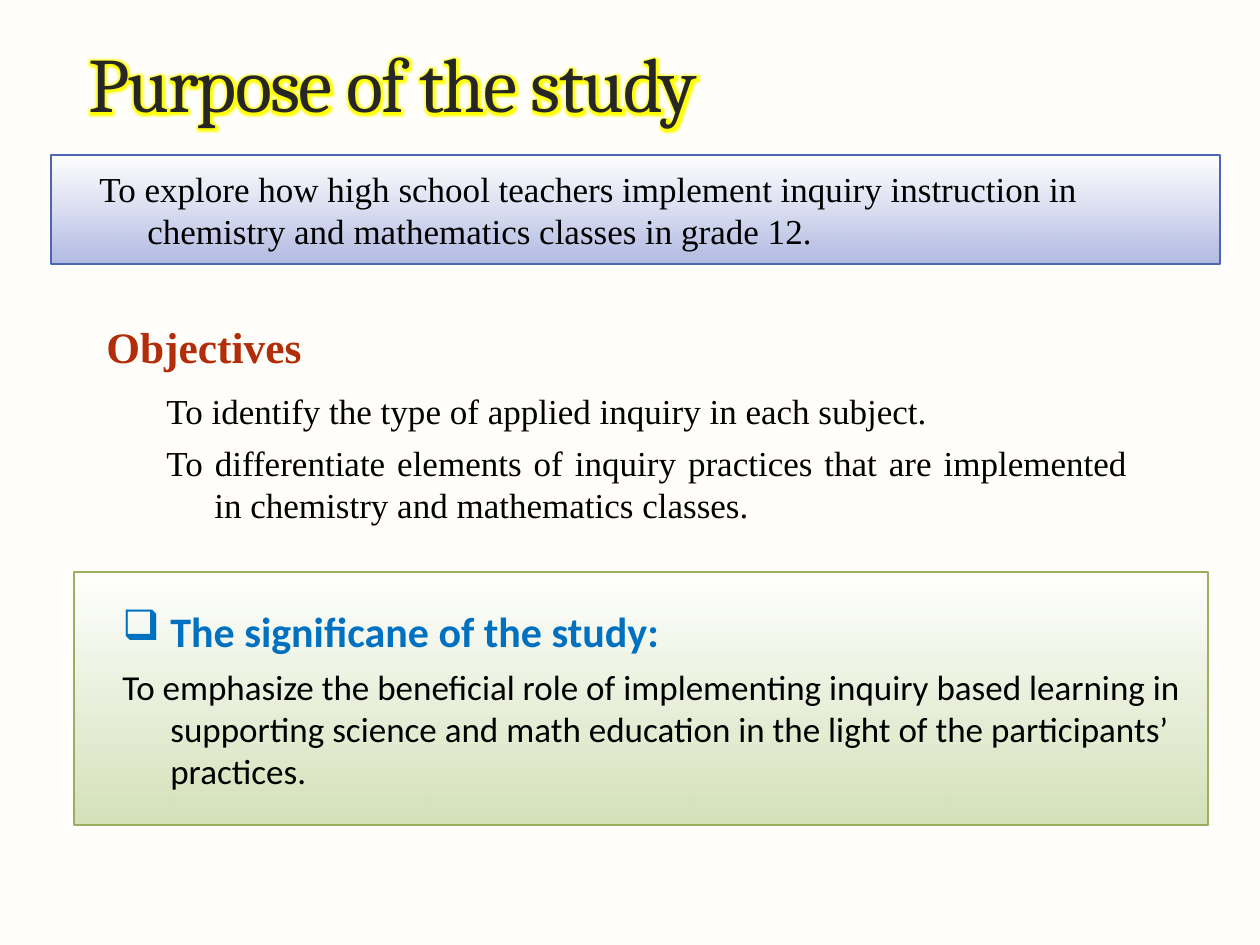
from lxml.etree import SubElement
from pptx import Presentation
from pptx.dml.color import RGBColor
from pptx.enum.shapes import MSO_SHAPE as SHAPE
from pptx.enum.text import MSO_ANCHOR as ANCHOR, PP_ALIGN as ALIGN
from pptx.oxml.ns import qn
from pptx.util import Pt

SCALE = 914400 / 126
WIDTH, HEIGHT = 1260, 945

CREAM = RGBColor(0xFF, 0xFE, 0xE6)
WHITE = RGBColor(0xFF, 0xFF, 0xFF)
BLACK = RGBColor(0, 0, 0)
CHARCOAL = RGBColor(0x26, 0x26, 0x26)
YELLOW = RGBColor(0xFF, 0xFF, 0)
RED = RGBColor(0xB2, 0x2D, 0x09)
BLUE = RGBColor(0, 0x70, 0xC0)
LAVENDER = RGBColor(0xB2, 0xBB, 0xE2)
INDIGO = RGBColor(0x4E, 0x66, 0xB2)
SAGE = RGBColor(0xD5, 0xE1, 0xB9)
GREEN = RGBColor(0x9B, 0xB0, 0x5E)

TITLE = {"name": "Cambria", "size": Pt(44)}
HEADING = {"name": "Times New Roman", "size": Pt(24.8), "bold": True}
BODY = {"name": "Times New Roman", "size": Pt(20)}
SIGN_HEADING = {"name": "Calibri", "size": Pt(24), "bold": True}
SIGN_BODY = {"name": "Calibri", "size": Pt(20)}


def px(n):
    return round(n * SCALE)


def set_alpha(color, percent):
    SubElement(color, qn("a:alpha"), val=str(percent * 1000))


def add_rect(s, box):
    sp = s.shapes.add_shape(SHAPE.RECTANGLE, *map(px, box))
    sp.shadow.inherit = False
    return sp


def add_panel(s, box, shade, border):
    """Rectangle that fades from white at the top to a shade."""
    sp = add_rect(s, box)
    sp.fill.gradient()
    sp.fill.gradient_angle = 270
    for stop, color, place in zip(sp.fill.gradient_stops, (WHITE, shade), (0, 1)):
        stop.color.rgb, stop.position = color, place
    set_alpha(next(sp._element.iter(qn("a:gs")))[0], 94)
    sp.line.color.rgb, sp.line.width = border, Pt(0.75)
    return sp


def add_textbox(s, box, anchor):
    sp = s.shapes.add_textbox(*map(px, box))
    sp.text_frame.vertical_anchor = anchor
    return sp


def write(sp, lines):
    """Fill a shape with (text, font format, colour, alignment) lines."""
    tf = sp.text_frame
    tf.word_wrap = True
    for i, (text, form, color, align) in enumerate(lines):
        p = tf.add_paragraph() if i else tf.paragraphs[0]
        p.alignment = align
        r = p.add_run()
        r.text = text
        for key, value in form.items():
            setattr(r.font, key, value)
        r.font.color.rgb = color
    return tf


def hang(tf, bullets=()):
    """Give every paragraph a hanging indent, and some a bullet."""
    for i, p in enumerate(tf.paragraphs):
        p.level = 1
        p.space_after = Pt(6)
        pPr = p._p.get_or_add_pPr()
        pPr.set("marL", str(px(84)))
        pPr.set("indent", str(px(-48)))
        if i in bullets:
            SubElement(pPr, qn("a:buChar"), char="❑")
        else:
            SubElement(pPr, qn("a:buNone"))


def background(s, box):
    s.background.fill.solid()
    s.background.fill.fore_color.rgb = CREAM
    veil = add_rect(s, box)
    veil.fill.solid()
    veil.fill.fore_color.rgb = WHITE
    set_alpha(veil._element.spPr.find(qn("a:solidFill"))[0], 85)
    veil.line.fill.background()


def title(s, box):
    tf = write(add_textbox(s, box, ANCHOR.MIDDLE),
               [("Purpose of the study", TITLE, CHARCOAL, ALIGN.LEFT)])
    # Tight letter spacing and a yellow glow
    rPr = tf.paragraphs[0].runs[0].font._element
    rPr.set("spc", "-100")
    effects = rPr.makeelement(qn("a:effectLst"))
    rPr.find(qn("a:solidFill")).addnext(effects)
    glow = SubElement(effects, qn("a:glow"), rad=str(px(9)))
    SubElement(glow, qn("a:srgbClr"), val=str(YELLOW))


def purpose(s, box):
    text = ("To explore how high school teachers implement inquiry instruction in "
            "chemistry and mathematics classes in grade 12.")
    hang(write(add_panel(s, box, LAVENDER, INDIGO), [(text, BODY, BLACK, ALIGN.LEFT)]))


def objectives(s, box):
    x, y, w, h = box
    aims = ["To identify the type of applied inquiry in each subject.",
            "To differentiate elements of inquiry practices that are implemented "
            "in chemistry and mathematics classes."]
    hang(write(add_textbox(s, (x + 24, y + 76, w - 24, h - 76), ANCHOR.TOP),
               [(aim, BODY, BLACK, ALIGN.JUSTIFY) for aim in aims]))
    write(add_textbox(s, (x, y, 228, 78), ANCHOR.MIDDLE),
          [("Objectives", HEADING, RED, ALIGN.LEFT)])


def significance(s, box):
    text = ("To emphasize the beneficial role of implementing inquiry based learning in "
            "supporting science and math education in the light of the participants’ "
            "practices.")
    tf = write(add_panel(s, box, SAGE, GREEN),
               [("The significane of the study:", SIGN_HEADING, BLUE, ALIGN.LEFT),
                (text, SIGN_BODY, BLACK, ALIGN.LEFT)])
    hang(tf, bullets=(0,))


def main():
    prs = Presentation()
    prs.slide_width, prs.slide_height = px(WIDTH), px(HEIGHT)
    s = prs.slides.add_slide(prs.slide_layouts[6])
    background(s, (0, 0, WIDTH, HEIGHT))
    title(s, (76, 32, 1108, 100))
    purpose(s, (51, 155, 1169, 109))
    objectives(s, (94, 307, 1046, 226))
    significance(s, (74, 572, 1134, 253))
    prs.save("out.pptx")


if __name__ == "__main__":
    main()
